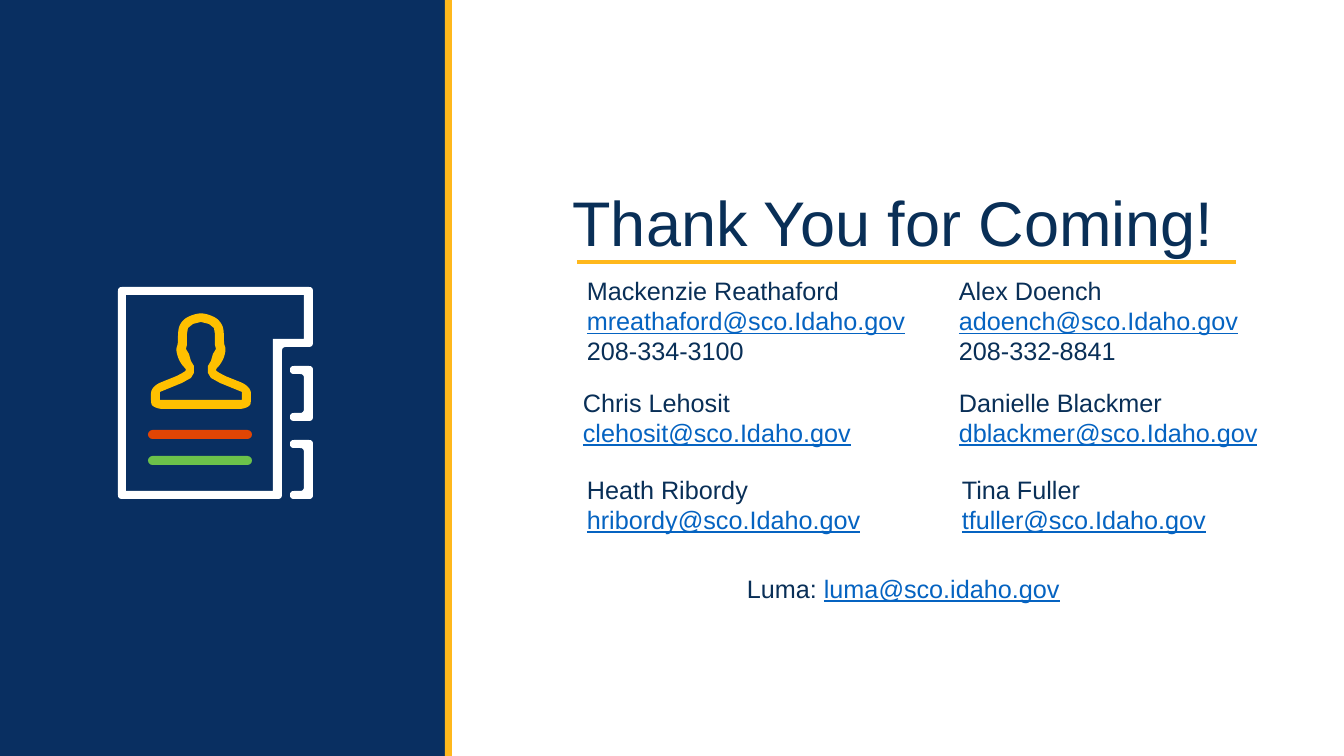
from dataclasses import dataclass
from math import dist

from pptx import Presentation
from pptx import util as u
from pptx.dml.color import RGBColor
from pptx.enum import shapes, text
from pptx.oxml import xmlchemy as xc
from pptx.oxml.ns import qn

PX = u.Inches(1) / 100.8
Point = tuple[float, float]


@dataclass(frozen=True)
class Theme:
    navy: str = "092F61"
    ink: str = "092F57"
    gold: str = "FFB81C"
    amber: str = "FFC000"
    green: str = "6CC24A"
    rust: str = "E14504"
    white: str = "FFFFFF"
    link: str = "0563C1"
    font: str = "Arial"
    title: int = 45
    body: int = 18
    rule: float = 2.25


@dataclass(frozen=True)
class Bar:
    kind: shapes.MSO_SHAPE
    left: int
    top: int
    width: int
    height: int
    fill: str


@dataclass(frozen=True)
class Card:
    left: int
    top: int
    width: int
    lines: tuple[str, ...]


@dataclass(frozen=True)
class Form:
    outer: list[Point]
    hole: list[Point]
    fill: str


T = Theme()
RECT = shapes.MSO_SHAPE.RECTANGLE
PILL = shapes.MSO_SHAPE.ROUNDED_RECTANGLE

BARS = [
    Bar(RECT, 0, 0, 447, 756, T.navy),
    Bar(RECT, 445, 0, 7, 756, T.gold),
    Bar(PILL, 148, 456, 104, 9, T.green),
    Bar(PILL, 148, 430, 104, 9, T.rust),
]

CARDS = [
    Card(577, 270, 347, ("Mackenzie Reathaford", "mreathaford@sco.Idaho.gov", "208-334-3100")),
    Card(949, 270, 311, ("Alex Doench", "adoench@sco.Idaho.gov", "208-332-8841")),
    Card(573, 382, 314, ("Chris Lehosit", "clehosit@sco.Idaho.gov")),
    Card(949, 382, 339, ("Danielle Blackmer", "dblackmer@sco.Idaho.gov")),
    Card(577, 469, 314, ("Heath Ribordy", "hribordy@sco.Idaho.gov")),
    Card(952, 469, 314, ("Tina Fuller", "tfuller@sco.Idaho.gov")),
    Card(737, 568, 339, ("Luma: luma@sco.idaho.gov",)),
]

BOOK = [(118, 287), (313, 287), (313, 347), (282, 347), (282, 499), (118, 499)]
PAGE = [(126, 295), (304, 295), (304, 339), (273, 339), (273, 491), (126, 491)]
BUST = [(0, 313), (9, 315), (17, 319), (22, 326), (23, 334), (23, 344),
        (25, 349), (23, 358), (19, 365), (15, 369), (15, 371), (24, 376),
        (44, 384), (50, 390), (50, 402), (49, 406), (42, 409)]
FACE = [(0, 322), (8, 324), (13, 328), (14, 334), (14, 345), (15, 349),
        (12, 354), (10, 361), (7, 366), (7, 373), (10, 378), (19, 383),
        (41, 392), (41, 400)]


def px(size: float) -> u.Emu:
    return u.Emu(round(size * PX))


def rgb(code: str) -> RGBColor:
    return RGBColor.from_string(code)


def mirror(half: list[Point], mid: int = 201) -> list[Point]:
    right = [(mid + x, y) for x, y in half]
    left = [(mid - x, y) for x, y in reversed(half[1:])]
    return right + left


def tab(top: int, base: int) -> list[Point]:
    return [(290, top), (313, top), (313, base), (290, base),
            (290, base - 8), (304, base - 8), (304, top + 8), (290, top + 8)]


def soften(pts: list[Point], rad: int = 4, steps: int = 4) -> list[Point]:
    out = []
    for i, (x, y) in enumerate(pts):
        ends = []
        for ex, ey in (pts[i - 1], pts[(i + 1) % len(pts)]):
            part = min(rad / dist((x, y), (ex, ey)), 0.5)
            ends.append((x + (ex - x) * part, y + (ey - y) * part))
        (ax, ay), (bx, by) = ends
        for k in range(steps + 1):
            t = k / steps
            a, c, b = (1 - t) ** 2, 2 * t * (1 - t), t * t
            out.append((a * ax + c * x + b * bx, a * ay + c * y + b * by))
    return out


def paint(shape, fill: str) -> None:
    shape.shadow.inherit = False
    shape.fill.solid()
    shape.fill.fore_color.rgb = rgb(fill)
    shape.line.fill.background()


def add_bar(tree, bar: Bar) -> None:
    shape = tree.add_shape(bar.kind, px(bar.left), px(bar.top), px(bar.width), px(bar.height))
    if bar.kind == PILL:
        shape.adjustments[0] = 0.5
    paint(shape, bar.fill)


def add_form(tree, form: Form) -> None:
    first, *rest = [(px(x), px(y)) for x, y in soften(form.outer)]
    pen = tree.build_freeform(*first, scale=1.0)
    pen.add_line_segments(rest, close=True)
    if form.hole:
        first, *rest = [(px(x), px(y)) for x, y in form.hole]
        pen.move_to(*first)
        pen.add_line_segments(rest, close=True)
    paint(pen.convert_to_shape(), form.fill)


def style(font, size: int, color: str) -> None:
    font.name = T.font
    font.size = u.Pt(size)
    font.color.rgb = rgb(color)


def add_card(tree, card: Card) -> None:
    high = 30 * len(card.lines) + 10
    frame = tree.add_textbox(px(card.left), px(card.top), px(card.width), px(high)).text_frame
    frame.word_wrap = True
    frame.text = "\n".join(card.lines)
    for para, line in zip(frame.paragraphs, card.lines):
        if "@" in line:
            label, gap, mail = line.rpartition(" ")
            para.text = label + gap
            para.add_run().text = mail
        for run in para.runs:
            mail = "@" in run.text
            style(run.font, T.body, T.link if mail else T.ink)
            if mail:
                run.font.underline = True


def add_title(slide) -> None:
    title = slide.shapes.title
    title.left, title.top, title.width, title.height = px(535), px(184), px(716), px(85)
    frame = title.text_frame
    frame.text = "Thank You for Coming!"
    frame.margin_left = frame.margin_right = 0
    frame.vertical_anchor = text.MSO_ANCHOR.MIDDLE
    para = frame.paragraphs[0]
    para.alignment = text.PP_ALIGN.CENTER
    para.line_spacing = 0.9
    style(para.runs[0].font, T.title, T.ink)


def add_rule(tree) -> None:
    rule = tree.add_connector(shapes.MSO_CONNECTOR.STRAIGHT, px(577), px(262), px(1236), px(262))
    rule.line.color.rgb = rgb(T.gold)
    rule.line.width = u.Pt(T.rule)
    xc.OxmlElement("a:effectLst")
    rule._element.spPr.append(xc.OxmlElement("a:effectLst"))


def main() -> None:
    deck = Presentation()
    deck.slide_width, deck.slide_height = px(1344), px(756)
    slide = deck.slides.add_slide(deck.slide_layouts.get_by_name("Title Only"))
    tree = slide.shapes
    for bar in BARS:
        add_bar(tree, bar)
    forms = [
        Form(BOOK, PAGE, T.white),
        Form(tab(366, 421), [], T.white),
        Form(tab(440, 499), [], T.white),
        Form(mirror(BUST), mirror(FACE), T.amber),
    ]
    for form in forms:
        add_form(tree, form)
    add_title(slide)
    add_rule(tree)
    for card in CARDS:
        add_card(tree, card)
    deck.save("out.pptx")


if __name__ == "__main__":
    main()
